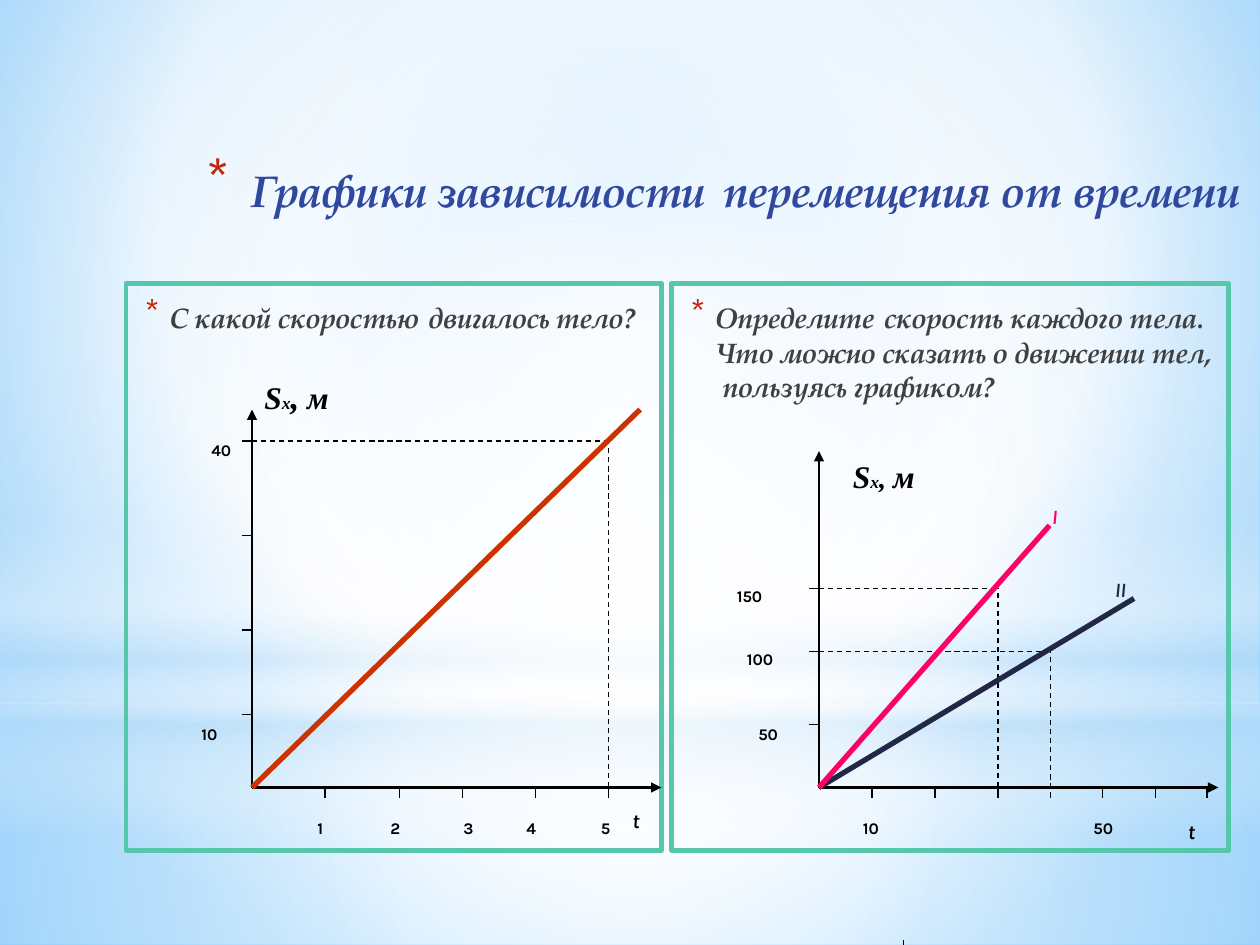
from lxml import etree
from pptx import Presentation, util as u
from pptx.dml.color import RGBColor
from pptx.enum import dml, shapes, text
from pptx.oxml.ns import qn

SERIF, SANS, ROMAN = "TeX Gyre Pagella", "Karla", "Times New Roman"
BLACK, NAVY, PINK, ORANGE = "000000", "212745", "FF0066", "CC3300"
BLUE, GREY, GREEN, RED = "31489F", "404040", "56C7AA", "C3260C"

# Gradient stops: position %, colour, opacity %
BACKGROUND = [(0, "9ED5FF", 100), (60, "FFFFFF", 100), (100, "5BB9FF", 100)]
CENTRE = (50, 50, 50, 50)
GLOWS = [
    ("RECTANGLE", (0, 5.58, 10, 1.92), CENTRE,
     [(0, "FFFFFF", 91), (37, "FFFFFF", 76), (100, "B4DCFA", 79)]),
    ("RECTANGLE", (0, 0, 10, 5.58), CENTRE,
     [(0, "FFFFFF", 89), (48, "FFFFFF", 62), (100, "B4DCFA", 79)]),
    ("RECTANGLE", (0, 4.12, 10, 2.5), None,
     [(0, "FFFFFF", 0), (29, "FFFFFF", 30), (45, "B4DCFA", 40),
      (55, "FFFFFF", 26), (65, "B4DCFA", 60), (100, "FFFFFF", 0)]),
    ("OVAL", (0, 1.75, 10, 5.58), CENTRE, [(0, "FFFFFF", 100), (56, "FFFFFF", 0)]),
]

# Spans: text, size, italic and bold
TITLE = [("Графики зависимости", 25.2, True), (" ", 41.4, False),
         ("перемещения от времени", 25.2, True)]
QUESTIONS = [
    ((1, 2.25, 4.25, 4.5),
     [("С какой скоростью", 16, True), (" ", 22, False), ("двигалось", 16, True),
      (" ", 14, True), ("тело?", 16, True)]),
    ((5.33, 2.25, 4.42, 4.5),
     [("Определите", 16, True), (" ", 22, False),
      ("скорость каждого тела. Что можно сказать о движении тел,  "
       "пользуясь графиком?", 16, True)]),
]

AXIS_Y, TICK = 6.25, 0.08
GRAPHS = [
    dict(origin=2, right=5.25, top=3.25,
         x_ticks=[2.58, 3.17, 3.67, 4.25, 4.83], y_ticks=[5.67, 5, 4.25, 3.5],
         guides=[(4.83, 3.5, AXIS_Y)], motions=[(5.08, 3.25, ORANGE)],
         numbers=[("1", 2.42, 6.42), ("2", 3, 6.42), ("3", 3.58, 6.42),
                  ("4", 4.08, 6.42), ("5", 4.67, 6.42),
                  ("10", 1.5, 5.67), ("40", 1.58, 3.42)],
         names=[("t", 4.92, 6.33, BLACK)],
         quantity=(2, 2.92), spans=[("S", 18), ("x", 10), (",", 20), (" м", 18)]),
    dict(origin=6.5, right=9.67, top=3.58,
         x_ticks=[6.92, 7.42, 7.92, 8.75, 9.17, 9.58], y_ticks=[5.75, 5.17, 4.67],
         guides=[(8.34, 5.17, AXIS_Y + TICK), (7.92, 4.67, AXIS_Y)],
         motions=[(9, 4.75, NAVY), (8.33, 4.17, PINK)],
         numbers=[("10", 6.75, 6.42), ("50", 8.58, 6.42),
                  ("50", 5.92, 5.67), ("100", 5.83, 5.08), ("150", 5.75, 4.58)],
         names=[("t", 9.33, 6.42, BLACK), ("I", 8.25, 3.92, PINK),
                ("II", 8.75, 4.5, NAVY)],
         quantity=(6.67, 3.58), spans=[("S", 18), ("x", 10), (", ", 16), ("м", 18)]),
]

deck = Presentation()
deck.slide_width, deck.slide_height = u.Inches(10), u.Inches(7.5)
page = deck.slides.add_slide(deck.slide_layouts[6])


def colour(value):
    return RGBColor.from_string(value)


def child(parent, tag, **attributes):
    return etree.SubElement(parent, qn(tag), {k: str(v) for k, v in attributes.items()})


def paint_gradient(fill, holder, stops, focus=None):
    """Fill with the stops, round a focus (left, top, right, bottom %) or downwards."""
    fill.gradient()
    gradient = holder.find(".//" + qn("a:gradFill"))
    for part in list(gradient):
        gradient.remove(part)
    stop_list = child(gradient, "a:gsLst")
    for position, value, opacity in stops:
        stop = child(stop_list, "a:gs", pos=position * 1000)
        shade = child(stop, "a:srgbClr", val=value)
        if opacity < 100:
            child(shade, "a:alpha", val=opacity * 1000)
    if focus:
        shape_path = child(gradient, "a:path", path="circle")
        child(shape_path, "a:fillToRect",
              **{side: share * 1000 for side, share in zip("ltrb", focus)})
    else:
        child(gradient, "a:lin", ang=90 * 60000, scaled=0)


def add_shape(kind, place):
    shape = page.shapes.add_shape(getattr(shapes.MSO_SHAPE, kind), *map(u.Inches, place))
    shape.shadow.inherit = False
    return shape


def add_line(start, end, value=BLACK, width=0.75, dashed=False, arrow=False):
    line = page.shapes.add_connector(
        shapes.MSO_CONNECTOR.STRAIGHT, *map(u.Inches, (*start, *end)))
    line.line.color.rgb = colour(value)
    line.line.width = u.Pt(width)
    if dashed:
        line.line.dash_style = dml.MSO_LINE.DASH
    if arrow:
        child(line.line._get_or_add_ln(), "a:tailEnd", type="triangle")
    child(line._element.spPr, "a:effectLst")


def write(box, spans, font=SANS, value=BLACK, align="LEFT", anchor="TOP", raised=False):
    """Write (text, size, strong) spans as the one paragraph of the box."""
    frame = box.text_frame
    frame.word_wrap = True
    frame.vertical_anchor = getattr(text.MSO_ANCHOR, anchor)
    para = frame.paragraphs[0]
    para.alignment = getattr(text.PP_ALIGN, align)
    for words, size, strong in spans:
        span = para.add_run()
        span.text = words
        span.font.name, span.font.size = font, u.Pt(size)
        span.font.bold = strong != "plain" and bool(strong)
        span.font.italic = strong is True
        span.font.color.rgb = colour(value)
        if raised:
            span.font._element.set("baseline", "30000")
    return para


def add_text(place, spans, **options):
    box = page.shapes.add_textbox(*map(u.Inches, place))
    return write(box, spans, **options)


def add_bullet(para, margin, indent, percent):
    props = para._p.get_or_add_pPr()
    props.set("marL", str(u.Inches(margin)))
    props.set("indent", str(u.Inches(-indent)))
    child(child(props, "a:buClr"), "a:srgbClr", val=RED)
    child(props, "a:buSzPct", val=percent * 1000)
    child(props, "a:buFont", typeface=SANS)
    child(props, "a:buChar", char="*")


def draw_graph(graph):
    left = graph["origin"]
    origin = (left, AXIS_Y)
    add_line(origin, (graph["right"], AXIS_Y), width=1.5, arrow=True)
    add_line(origin, (left, graph["top"]), width=1.5, arrow=True)
    for x in graph["x_ticks"]:
        add_line((x, AXIS_Y), (x, AXIS_Y + TICK))
    for y in graph["y_ticks"]:
        add_line((left, y), (left - TICK, y))
    for x, y, foot in graph["guides"]:
        add_line((x, foot), (x, y), dashed=True)
        add_line((left, y), (x, y), dashed=True)
    for x, y, value in graph["motions"]:
        add_line(origin, (x, y), value, width=3)
    for label, x, y in graph["numbers"]:
        add_text((x, y, 0.6, 0.28), [(label, 16, "bold")], raised=True)
    for label, x, y, value in graph["names"]:
        add_text((x, y, 0.4, 0.32), [(label, 20, True)], value=value, raised=True)
    add_text((*graph["quantity"], 1, 0.42),
             [(words, size, True) for words, size in graph["spans"]], font=ROMAN)


paint_gradient(page.background.fill, page._element, BACKGROUND, (20, 10, 20, 60))
for kind, place, focus, stops in GLOWS:
    glow = add_shape(kind, place)
    glow.line.fill.background()
    paint_gradient(glow.fill, glow._element, stops, focus)

heading = add_text((1.48, 0.92, 8.52, 1), TITLE, font=SERIF, value=BLUE,
                   align="CENTER", anchor="MIDDLE")
add_bullet(heading, 0.35, 0.35, 128)

for place, spans in QUESTIONS:
    panel = add_shape("RECTANGLE", place)
    panel.fill.background()
    panel.line.color.rgb = colour(GREEN)
    panel.line.width = u.Pt(2.5)
    add_bullet(write(panel, spans, font=SERIF, value=GREY), 0.25, 0.2, 130)

for graph in GRAPHS:
    draw_graph(graph)
add_line((7.17, 7.46), (7.17, 7.54))

deck.save("out.pptx")
